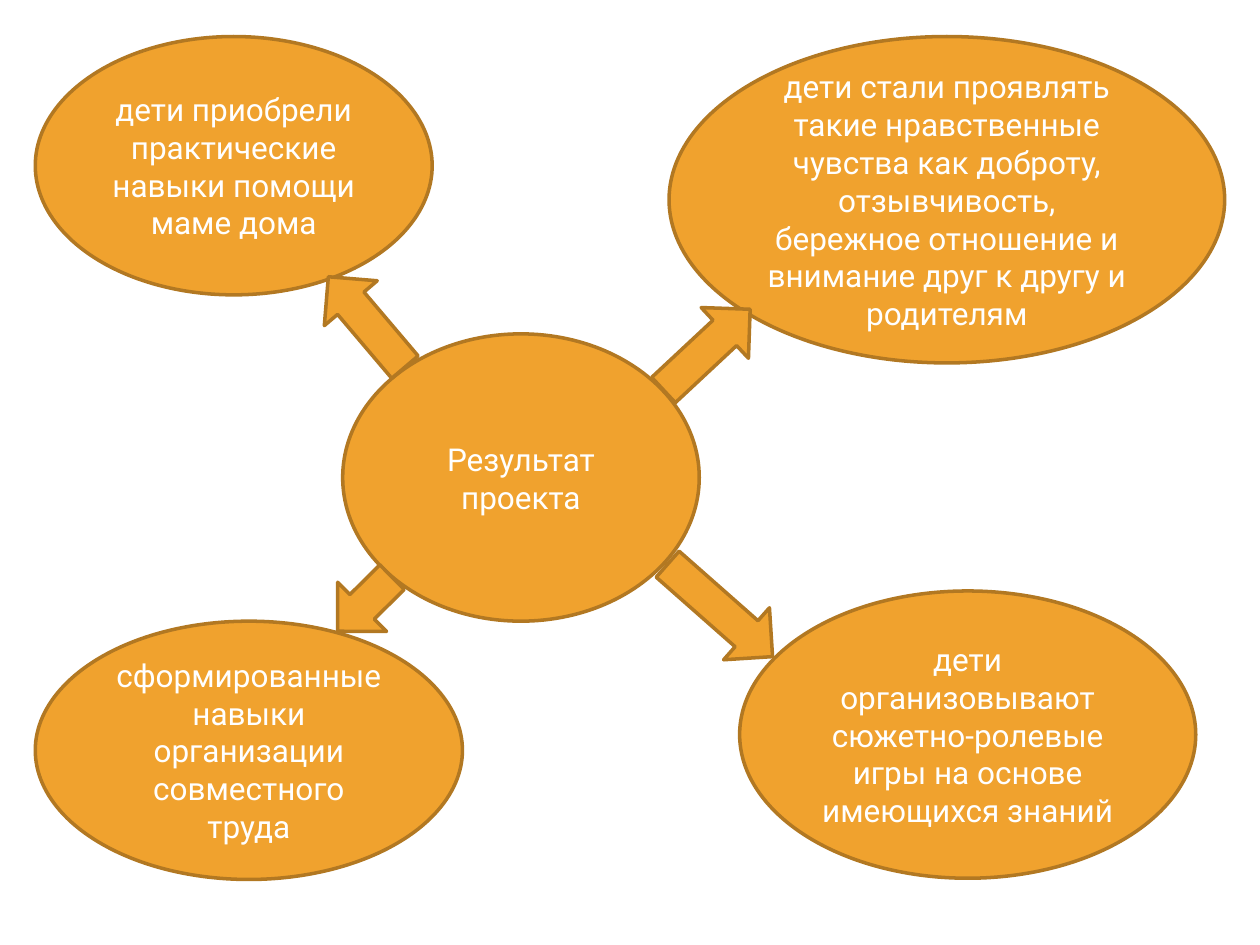
import pptx
import pptx.util
import pptx.dml.color
import pptx.enum.shapes
import pptx.enum.text

Inches = pptx.util.Inches
Pt = pptx.util.Pt
RGBColor = pptx.dml.color.RGBColor
MSO_SHAPE = pptx.enum.shapes.MSO_SHAPE

ORANGE = RGBColor(0xF0, 0xA2, 0x2E)
BROWN = RGBColor(0xB2, 0x78, 0x22)
WHITE = RGBColor(0xFF, 0xFF, 0xFF)

OUTCOMES = [
    ("дети организовывают сюжетно-ролевые игры на основе имеющихся знаний",
     5.87, 4.69, 3.62, 2.28),
    ("сформированные навыки организации совместного труда",
     0.28, 4.93, 3.39, 2.05),
    ("дети приобрели практические навыки помощи маме дома",
     0.28, 0.29, 3.15, 2.05),
    ("дети стали проявлять такие нравственные чувства как доброту, "
     "отзывчивость, бережное отношение и внимание друг к другу и родителям",
     5.31, 0.29, 4.41, 2.59),
]
PROJECT_RESULT = ("Результат проекта", 2.72, 2.65, 2.83, 2.28)
ARROWS = [
    (2.44, 2.28, 0.94, 229.7),
    (2.59, 4.52, 0.61, 135.2),
    (5.14, 2.5, 0.94, 317),
    (5.16, 4.57, 1.11, 41.4),
]


class ResultMap:
    font_name = "Roboto"
    font_size = Pt(18)
    outline_width = Pt(2)
    arrow_height = 0.55

    def __init__(self, slide):
        self.slide = slide

    def outlined(self, preset, left, top, width, height):
        shape = self.slide.shapes.add_shape(
            preset, Inches(left), Inches(top), Inches(width), Inches(height))
        shape.shadow.inherit = False
        shape.fill.solid()
        shape.fill.fore_color.rgb = ORANGE
        shape.line.color.rgb = BROWN
        shape.line.width = self.outline_width
        return shape

    def bubble(self, wording, left, top, width, height):
        oval = self.outlined(MSO_SHAPE.OVAL, left, top, width, height)
        frame = oval.text_frame
        frame.text = wording
        frame.word_wrap = True
        frame.vertical_anchor = pptx.enum.text.MSO_ANCHOR.MIDDLE
        paragraph = frame.paragraphs[0]
        paragraph.alignment = pptx.enum.text.PP_ALIGN.CENTER
        font = paragraph.runs[0].font
        font.name = self.font_name
        font.size = self.font_size
        font.color.rgb = WHITE

    def arrow(self, left, top, length, angle):
        pointer = self.outlined(
            MSO_SHAPE.RIGHT_ARROW, left, top, length, self.arrow_height)
        pointer.rotation = angle


def main():
    presentation = pptx.Presentation()
    presentation.slide_width = Inches(10)
    presentation.slide_height = Inches(7.5)
    result_map = ResultMap(
        presentation.slides.add_slide(presentation.slide_layouts[6]))
    for bubble in OUTCOMES + [PROJECT_RESULT]:
        result_map.bubble(*bubble)
    for arrow in ARROWS:
        result_map.arrow(*arrow)
    presentation.save("out.pptx")


if __name__ == "__main__":
    main()
